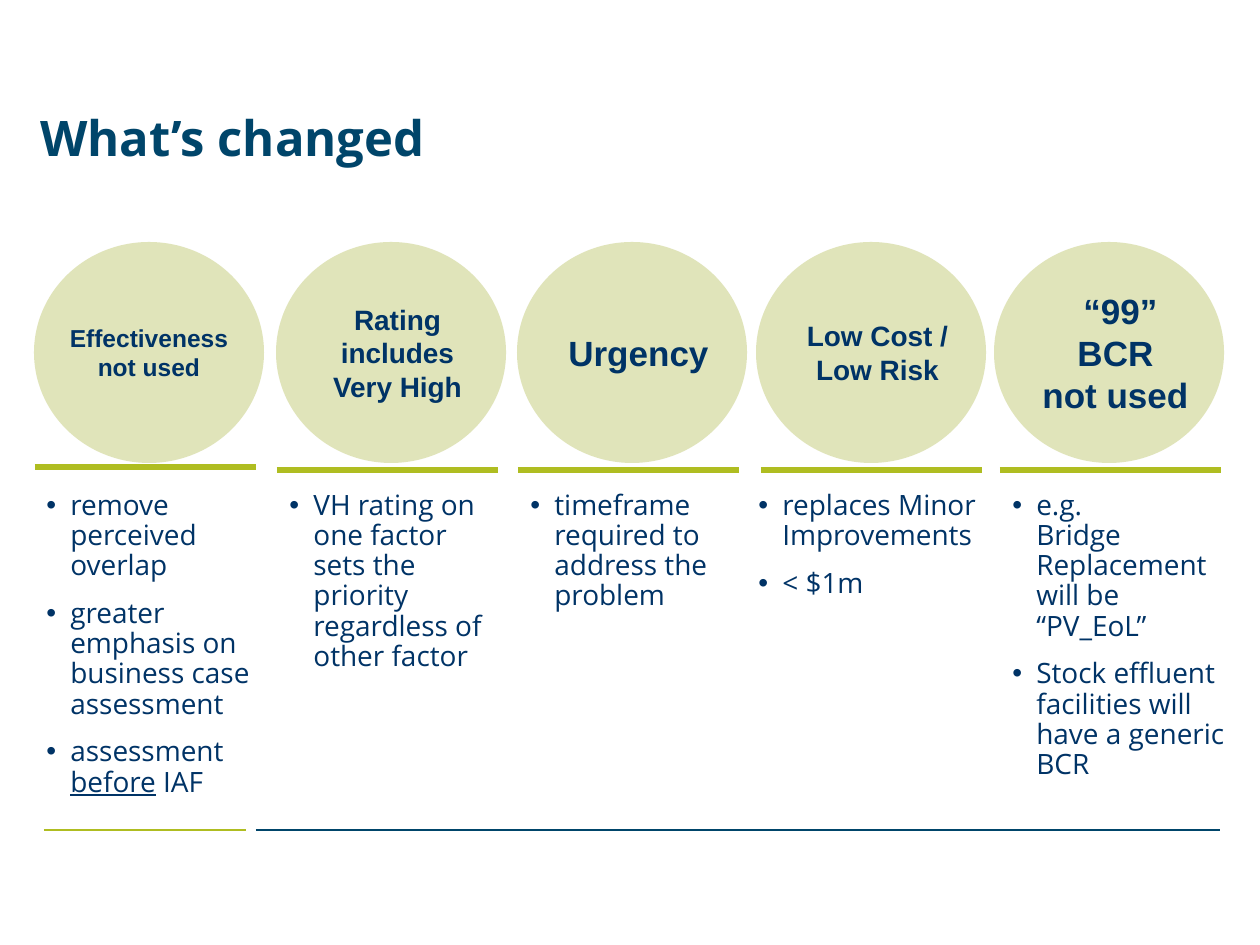
import pptx
import pptx.dml.color
import pptx.enum.shapes
import pptx.enum.text
import pptx.oxml
import pptx.oxml.ns
import pptx.util
from lxml import etree

EMU_PER_PX = 914400 / 126
NAVY, TEAL, LIME, OLIVE = "003366", "00456A", "AFBD21", "9AA71D"
ANCHOR = pptx.enum.text.MSO_ANCHOR
RULE_WIDTH = 221
CIRCLE_TOP, CIRCLE_WIDTH, CIRCLE_HEIGHT = 242, 230, 221
BODY_TOP, BODY_HEIGHT = 485, 324

# heading lines, heading size, heading left inset, circle left,
# rule left, rule y, body left, body width, bullets (*word* is underlined)
COLUMNS = [
    (["Effectiveness not used"], 14, 0, 34, 35, 467, 34, 241,
     ["remove perceived overlap",
      "greater emphasis on business case assessment",
      "assessment *before* IAF"]),
    (["Rating includes Very High"], 16, 13, 276, 277, 470, 277, 222,
     ["VH rating on one factor sets the priority regardless of other factor"]),
    (["Urgency"], 20, 13, 517, 518, 470, 518, 222,
     ["timeframe required to address the problem"]),
    (["Low Cost / Low Risk"], 16, 13, 756, 761, 470, 746, 248,
     ["replaces Minor Improvements", "< $1m"]),
    ([" “99” BCR", "not used"], 20, 13, 994, 1000, 470, 1000, 239,
     ["e.g. \vBridge Replacement will be “PV_EoL”",
      "Stock effluent facilities will have a generic BCR"]),
]


def px(length):
    return pptx.util.Emu(round(length * EMU_PER_PX))


def color(value):
    return pptx.dml.color.RGBColor.from_string(value)


def add_child(parent, tag, **attributes):
    return etree.SubElement(parent, pptx.oxml.ns.qn(tag), attributes)


class SlideBuilder:
    def __init__(self, slide):
        self.slide = slide

    def style_font(self, font, name, size, hex_color, bold=False):
        font.name = name
        font.size = pptx.util.Pt(size)
        font.bold = bold
        font.color.rgb = color(hex_color)

    def line(self, left, right, y, hex_color, points):
        connector = self.slide.shapes.add_connector(
            pptx.enum.shapes.MSO_CONNECTOR.STRAIGHT, px(left), px(y), px(right), px(y))
        connector.line.color.rgb = color(hex_color)
        connector.line.width = pptx.util.Pt(points)
        add_child(connector._element.spPr, "a:effectLst")

    def text_box(self, left, top, width, height, anchor):
        box = self.slide.shapes.add_textbox(px(left), px(top), px(width), px(height))
        box.text_frame.word_wrap = True
        box.text_frame.vertical_anchor = anchor
        return box.text_frame

    def title(self, text):
        frame = self.text_box(28, 86, 1189, 87, ANCHOR.BOTTOM)
        frame.text = text
        paragraph = frame.paragraphs[0]
        paragraph.line_spacing = 0.9
        self.style_font(paragraph.runs[0].font, "Open Sans", 28, TEAL, True)

    def circle(self, left, lines, size, inset):
        shape = self.slide.shapes.add_shape(
            pptx.enum.shapes.MSO_SHAPE.OVAL,
            px(left), px(CIRCLE_TOP), px(CIRCLE_WIDTH), px(CIRCLE_HEIGHT))
        shape.shadow.inherit = False
        shape.line.fill.background()
        shape.fill.solid()
        shape.fill.fore_color.rgb = color(OLIVE)
        fill_color = shape._element.spPr.find(".//" + pptx.oxml.ns.qn("a:srgbClr"))
        add_child(fill_color, "a:alpha", val="30000")
        frame = shape.text_frame
        frame.word_wrap = True
        frame.vertical_anchor = ANCHOR.MIDDLE
        frame.margin_left, frame.margin_right = px(inset), 0
        frame.text = "\n".join(lines)
        for paragraph in frame.paragraphs:
            paragraph.alignment = pptx.enum.text.PP_ALIGN.CENTER
            self.style_font(paragraph.runs[0].font, "Arial", size, NAVY, True)

    def bullets(self, left, width, items):
        frame = self.text_box(left, BODY_TOP, width, BODY_HEIGHT, ANCHOR.TOP)
        frame.text = "\n".join(item.replace("*", "") for item in items)
        for index, (paragraph, item) in enumerate(zip(frame.paragraphs, items)):
            paragraph.line_spacing = 0.9
            if index:
                paragraph.space_before = pptx.util.Pt(10)
            properties = paragraph._p.get_or_add_pPr()
            properties.set("marL", str(px(24)))
            properties.set("indent", str(-px(24)))
            add_child(properties, "a:buFont", typeface="Arial")
            add_child(properties, "a:buChar", char="•")
            if "*" in item:
                self.split_underlined(paragraph, item)
            for run in paragraph.runs:
                self.style_font(run.font, "Open Sans", 16, NAVY)

    def split_underlined(self, paragraph, item):
        """Make runs of the item, underlining the part between asterisks."""
        first, *rest = item.split("*")
        paragraph.text = first
        for position, part in enumerate(rest):
            run = paragraph.add_run()
            run.text = part
            run.font.underline = position % 2 == 0


def main():
    presentation = pptx.Presentation()
    presentation.slide_width, presentation.slide_height = px(1260), px(945)
    builder = SlideBuilder(presentation.slides.add_slide(presentation.slide_layouts[6]))

    builder.line(44, 246, 830, LIME, 0.75)
    builder.line(256, 1220, 830, TEAL, 0.75)
    builder.title("What’s changed")
    for (heading, size, inset, circle_left, rule_left, rule_y,
         body_left, body_width, items) in COLUMNS:
        builder.line(rule_left, rule_left + RULE_WIDTH, rule_y, LIME, 3)
        builder.bullets(body_left, body_width, items)
        builder.circle(circle_left, heading, size, inset)

    presentation.save("out.pptx")


if __name__ == "__main__":
    main()
